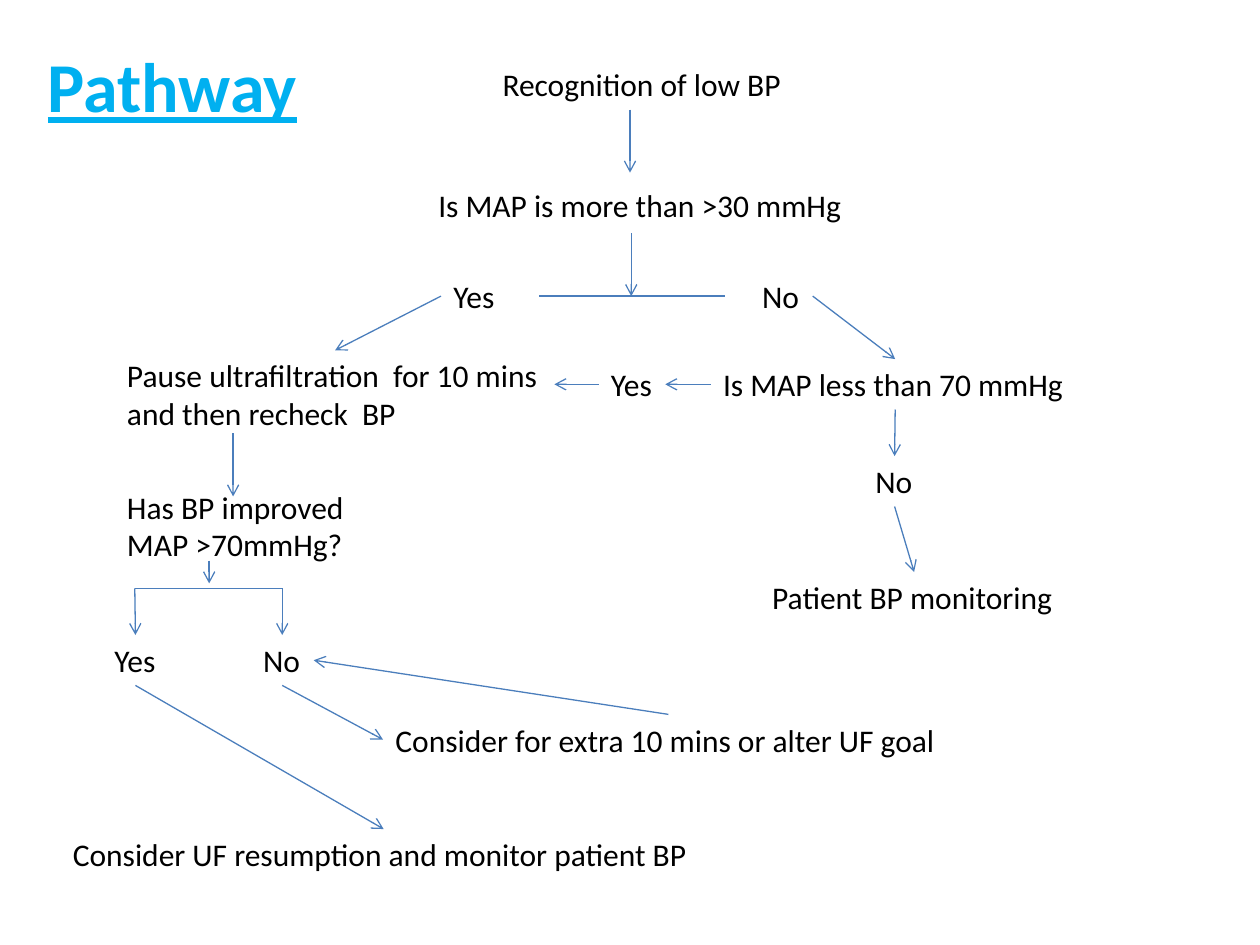
from dataclasses import dataclass

import pptx
import pptx.dml.color
import pptx.enum.shapes
import pptx.enum.text
import pptx.oxml
import pptx.oxml.ns
import pptx.util

TOP, LEFT, BOTTOM, RIGHT = range(4)


@dataclass(frozen=True)
class Theme:
    """Colours, type sizes and line heights of the slide."""
    font: str = "Calibri"
    heading: str = "00B0F0"
    ink: str = "000000"
    arrow: str = "4B7EBC"
    heading_size: float = 40
    step_size: float = 18
    line_width: float = 0.75
    one_row: float = 4
    two_rows: float = 7.1


class Flowchart:
    """A slide laid out on a grid of 100 columns and 75 rows."""

    def __init__(self, deck, theme):
        self.theme = theme
        self.slide = deck.slides.add_slide(deck.slide_layouts[5])
        self.column = deck.slide_width / 100
        self.row = deck.slide_height / 75

    def place(self, column, row):
        """Turn a grid position or size into slide lengths."""
        return round(column * self.column), round(row * self.row)

    def set_text(self, shape, lines, size, colour, bold=False, underline=False):
        """Fill a shape with left-aligned lines of text."""
        frame = shape.text_frame
        frame.text = "\n".join(lines)
        frame.word_wrap = False
        frame.auto_size = pptx.enum.text.MSO_AUTO_SIZE.NONE
        frame.vertical_anchor = pptx.enum.text.MSO_ANCHOR.TOP
        for paragraph in frame.paragraphs:
            paragraph.alignment = pptx.enum.text.PP_ALIGN.LEFT
            paragraph.font.name = self.theme.font
            paragraph.font.size = pptx.util.Pt(size)
            paragraph.font.color.rgb = pptx.dml.color.RGBColor.from_string(colour)
            paragraph.font.bold = bold
            paragraph.font.underline = underline

    def title(self, text, column, row, width, height):
        """Move and format the title placeholder."""
        heading = self.slide.shapes.title
        heading.left, heading.top = self.place(column, row)
        heading.width, heading.height = self.place(width, height)
        self.set_text(heading, [text], self.theme.heading_size, self.theme.heading,
                      bold=True, underline=True)

    def step(self, column, row, width, *lines, height=None):
        """Add one step of the pathway and return it."""
        height = height or (self.theme.two_rows if len(lines) > 1 else self.theme.one_row)
        box = self.slide.shapes.add_textbox(*self.place(column, row),
                                            *self.place(width, height))
        self.set_text(box, lines, self.theme.step_size, self.theme.ink)
        return box

    def answer(self, text, column, row):
        """Add a Yes or No answer."""
        return self.step(column, row, 5.3 if text == "Yes" else 5, text)

    def link(self, start, end, arrow=True):
        """Draw a line between grid points or (step, side) pairs."""
        points = [(0, 0) if not isinstance(place[0], (int, float)) else self.place(*place)
                  for place in (start, end)]
        line = self.slide.shapes.add_connector(
            pptx.enum.shapes.MSO_CONNECTOR.STRAIGHT, *points[0], *points[1])
        for place, join in ((start, line.begin_connect), (end, line.end_connect)):
            if not isinstance(place[0], (int, float)):
                join(*place)
        line.line.color.rgb = pptx.dml.color.RGBColor.from_string(self.theme.arrow)
        line.line.width = pptx.util.Pt(self.theme.line_width)
        properties = line._element.spPr
        if arrow:
            head = pptx.oxml.parse_xml(
                f'<a:tailEnd {pptx.oxml.ns.nsdecls("a")} type="arrow"/>')
            properties.find(pptx.oxml.ns.qn("a:ln")).append(head)
        properties.append(pptx.oxml.parse_xml(
            f'<a:effectLst {pptx.oxml.ns.nsdecls("a")}/>'))


def main():
    """Build the low blood pressure pathway."""
    deck = pptx.Presentation()
    deck.slide_width, deck.slide_height = pptx.util.Inches(10), pptx.util.Inches(7.5)
    chart = Flowchart(deck, Theme())

    chart.title("Pathway", 2.8, 2.9, 22, 7.7)
    chart.step(38.9, 4.7, 24.4, "Recognition of low BP")
    chart.step(33.8, 14.3, 34.5, "Is MAP is more than >30 mmHg")
    above_30 = chart.answer("Yes", 35, 21.5)
    not_above_30 = chart.answer("No", 59.5, 21.5)
    pause = chart.step(9.1, 27.8, 35, "Pause ultrafiltration  for 10 mins",
                       "and then recheck  BP")
    below_70 = chart.step(56.4, 28.5, 29.3, "Is MAP less than 70 mmHg")
    is_below_70 = chart.answer("Yes", 47.5, 28.5)
    not_below_70 = chart.answer("No", 68.5, 36.2)
    monitoring = chart.step(60.3, 45.4, 24.5, "Patient BP monitoring", height=7.1)
    chart.step(9.1, 38.2, 19.4, "Has BP improved", "MAP >70mmHg?")
    improved = chart.answer("Yes", 8.1, 50.4)
    not_improved = chart.answer("No", 19.9, 50.4)
    extra_time = chart.step(30.4, 56.7, 45.3, "Consider for extra 10 mins or alter UF goal")
    resumption = chart.step(4.8, 65.8, 51.3, "Consider UF resumption and monitor patient BP")

    for start, end in (
        ((50, 8.7), (50, 13.7)),
        ((50.1, 18.5), (50.1, 23.5)),
        ((above_30, LEFT), (pause, TOP)),
        ((not_above_30, RIGHT), (below_70, TOP)),
        ((below_70, LEFT), (is_below_70, RIGHT)),
        ((is_below_70, LEFT), (44, 30.5)),
        ((below_70, BOTTOM), (not_below_70, TOP)),
        ((not_below_70, BOTTOM), (monitoring, TOP)),
        ((18.5, 34.4), (18.5, 39.4)),
        ((16.6, 44.5), (16.6, 46.3)),
        ((10.7, 46.7), (improved, TOP)),
        ((22.4, 46.7), (not_improved, TOP)),
        ((improved, BOTTOM), (resumption, TOP)),
        ((not_improved, BOTTOM), (extra_time, LEFT)),
        ((extra_time, TOP), (not_improved, RIGHT)),
    ):
        chart.link(start, end)
    chart.link((42.8, 23.5), (57.5, 23.5), arrow=False)
    chart.link((10.7, 46.7), (22.4, 46.7), arrow=False)

    deck.save("out.pptx")


if __name__ == "__main__":
    main()
